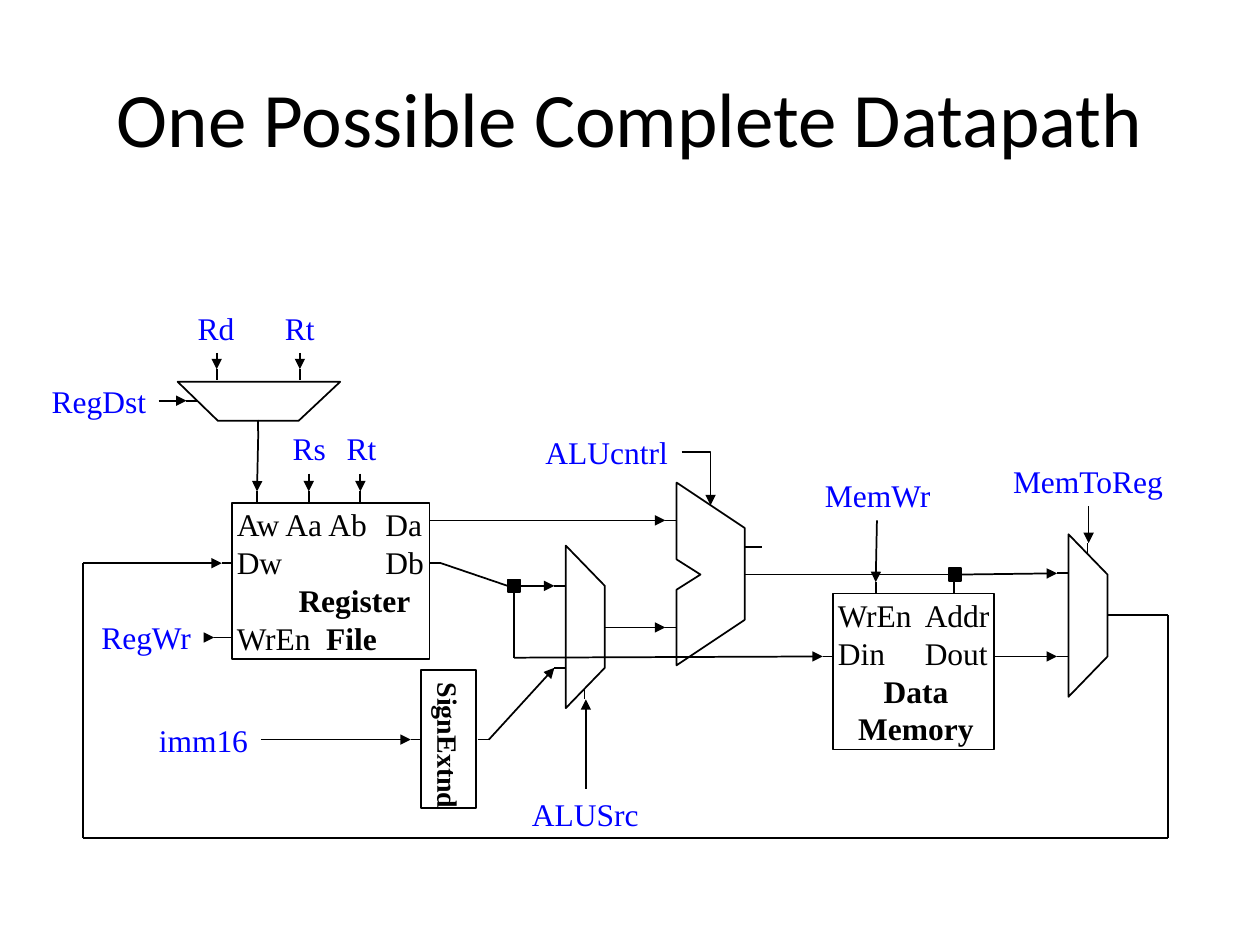
from itertools import pairwise
from lxml.etree import SubElement
from pptx import Presentation
from pptx.dml.color import RGBColor
from pptx.enum.shapes import MSO_CONNECTOR as LINK, MSO_SHAPE as SHAPE
from pptx.enum.text import MSO_ANCHOR as ANCHOR, PP_ALIGN as ALIGN
from pptx.oxml.ns import qn
from pptx.util import Cm, Pt

HUE = {"ink": "000000", "label": "0000FF", "paper": "FFFFFF"}
SERIF = "Times New Roman"
UNIT = 2.54  # the drawing grid is 2.54 cm
STUB = 0.09


def put(para, text, size=18, hue="ink", bold=False, face=SERIF):
    """Add one run to a paragraph."""
    run = para.add_run()
    run.text = text
    run.font.size, run.font.bold, run.font.name = Pt(size), bold, face
    run.font.color.rgb = RGBColor.from_string(HUE[hue])


def wire(x1, y1, x2, y2, arrow=False, kind=LINK.STRAIGHT):
    line = pen.add_connector(kind, *[Cm(UNIT * v) for v in (x1, y1, x2, y2)])
    line.line.color.rgb = RGBColor.from_string(HUE["ink"])
    line.line.width = Pt(1)
    if arrow:
        SubElement(line.line._get_or_add_ln(), qn("a:tailEnd"), type="triangle")
    SubElement(line._element.spPr, qn("a:effectLst"))
    return line


deck = Presentation()
deck.slide_width, deck.slide_height = Cm(25.4), Cm(19.05)
pen = deck.slides.add_slide(deck.slide_layouts[6]).shapes

# Title
title = pen.add_textbox(*[Cm(UNIT * v) for v in (0.5, 0.3, 9, 1.25)]).text_frame
title.word_wrap = True
title.vertical_anchor = ANCHOR.MIDDLE
title.paragraphs[0].alignment = ALIGN.CENTER
put(title.paragraphs[0], "One Possible Complete Datapath", 44, face="Calibri")

# ALU and the three multiplexers
plates = [
    [(5.37, 5.28), (5.91, 4.92), (5.91, 4.19), (5.37, 3.83),
     (5.37, 4.44), (5.56, 4.56), (5.37, 4.68)],
    [(1.41, 3.03), (1.73, 3.34), (2.37, 3.34), (2.7, 3.03)],
]
for x, y in [(4.49, 4.33), (8.48, 4.24)]:
    plates.append([(x, y), (x + 0.31, y + 0.32),
                   (x + 0.31, y + 0.97), (x, y + 1.29)])
solids = []
for dots in plates:
    dots = [(Cm(UNIT * x), Cm(UNIT * y)) for x, y in dots]
    form = pen.build_freeform(*dots[0], scale=1.0)
    form.add_line_segments(dots[1:], close=True)
    solids.append((form.convert_to_shape(), "paper"))

# Boxes and junction dots
blocks = []
for x, y, w, h, hue in [
    (1.84, 3.99, 1.57, 1.24, "paper"), (6.61, 4.71, 1.28, 1.24, "paper"),
    (3.34, 5.32, 0.44, 1.09, "paper"),
    (4.03, 4.6, 0.1, 0.1, "ink"), (7.53, 4.51, 0.1, 0.1, "ink"),
]:
    box = pen.add_shape(SHAPE.RECTANGLE, *[Cm(UNIT * v) for v in (x, y, w, h)])
    blocks.append(box)
    solids.append((box, hue))
for shape, hue in solids:
    shape.shadow.inherit = False
    shape.fill.solid()
    shape.fill.fore_color.rgb = RGBColor.from_string(HUE[hue])
    shape.line.color.rgb = RGBColor.from_string(HUE["ink"])
    shape.line.width = Pt(1)

# Port names: each row has a tab stop (None centres it) and (text, bold) runs
ports = [
    [(1.18, [("Aw Aa Ab\tDa", False)]), (1.18, [("Dw\tDb", False)]),
     (0.49, [("\tRegister", True)]),
     (0.71, [("WrEn\t", False), ("File", True)])],
    [(0.69, [("WrEn\tAddr", False)]), (0.69, [("Din\tDout", False)]),
     (None, [("Data", True)]), (None, [("Memory", True)])],
]
for box, rows in zip(blocks, ports):
    frame = box.text_frame
    frame.word_wrap = True
    frame.vertical_anchor = ANCHOR.MIDDLE
    frame.margin_left, frame.margin_right = Cm(0.1), 0
    for i, (stop, runs) in enumerate(rows):
        para = frame.add_paragraph() if i else frame.paragraphs[0]
        para.alignment = ALIGN.LEFT if stop else ALIGN.CENTER
        if stop:
            tabs = SubElement(para._p.get_or_add_pPr(), qn("a:tabLst"))
            SubElement(tabs, qn("a:tab"), pos=str(Cm(UNIT * stop)), algn="l")
        for text, bold in runs:
            put(para, text, bold=bold)

sign = blocks[2].text_frame
sign.word_wrap = False
sign.vertical_anchor = ANCHOR.MIDDLE
sign._txBody.bodyPr.set("vert", "eaVert")
sign.paragraphs[0].alignment = ALIGN.CENTER
put(sign.paragraphs[0], "SignExtnd", 16, bold=True)

# Signal names
for text, x, y, w in [
    ("Rd", 1.47, 2.4, 0.49), ("Rt", 2.16, 2.4, 0.44),
    ("RegDst", 0.31, 2.98, 0.95), ("Rs", 2.22, 3.36, 0.47),
    ("Rt", 2.65, 3.36, 0.44), ("ALUcntrl", 4.23, 3.39, 1.17),
    ("MemWr", 6.44, 3.73, 1.05), ("MemToReg", 7.93, 3.62, 1.41),
    ("RegWr", 0.7, 4.86, 0.92), ("imm16", 1.16, 5.67, 0.91),
    ("ALUSrc", 4.12, 6.26, 1.05),
]:
    frame = pen.add_textbox(*[Cm(UNIT * v) for v in (x, y, w, 0.4)]).text_frame
    frame.word_wrap = False
    frame.paragraphs[0].alignment = ALIGN.CENTER
    put(frame.paragraphs[0], text, hue="label")

# Short port stubs, by left or top end
for x, y in [
    (5.91, 4.56), (5.28, 4.13), (5.28, 4.98), (4.8, 4.98), (4.4, 4.65),
    (4.4, 5.3), (8.79, 4.88), (8.39, 5.21), (8.39, 4.55), (1.48, 3.18),
    (3.26, 5.87), (3.79, 5.87), (7.89, 5.21), (6.53, 5.21), (1.76, 4.47),
    (3.41, 4.47), (3.41, 4.13),
]:
    wire(x, y, x + STUB, y)
for x, y in [
    (4.64, 5.46), (8.63, 4.31), (2.05, 3.33), (2.38, 2.93), (1.72, 2.93),
    (6.95, 4.62), (7.57, 4.62), (2.04, 3.9), (2.45, 3.9), (2.86, 3.9),
]:
    wire(x, y, x, y + STUB)

# Plain wires
for ends in [(5.91, 4.34, 6.05, 4.34), (1.7, 5.06, 1.84, 5.06),
             (3.5, 4.47, 4.03, 4.65), (6, 4.56, 7.53, 4.56)]:
    wire(*ends)

# Wires with an arrowhead
for ends in [
    (3.88, 5.87, 4.4, 5.3), (4.89, 4.98, 5.28, 4.98), (2.07, 5.87, 3.26, 5.87),
    (4.13, 4.65, 4.4, 4.65), (7.62, 4.56, 8.39, 4.55), (7.57, 4.6, 7.57, 4.62),
    (2.05, 3.42, 2.04, 3.9), (2.45, 3.76, 2.45, 3.9), (2.86, 3.76, 2.86, 3.9),
    (3.5, 4.13, 5.28, 4.13), (7.98, 5.21, 8.39, 5.21), (4.65, 6.26, 4.65, 5.55),
    (1.26, 3.18, 1.48, 3.18), (1.72, 2.8, 1.72, 2.93), (2.38, 2.8, 2.38, 2.93),
    (1.62, 5.06, 1.7, 5.06), (6.96, 4.13, 6.95, 4.62), (8.64, 4.02, 8.64, 4.31),
]:
    wire(*ends, arrow=True)

# Write-back loop and the path from Db to Din
for route in [
    [(8.87, 4.88), (9.27, 4.88), (9.27, 6.65), (0.66, 6.65), (0.66, 4.47),
     (1.76, 4.47)],
    [(4.08, 4.69), (4.08, 5.22), (6.53, 5.21)],
]:
    for start, end in pairwise(route):
        wire(*start, *end, arrow=end == route[-1])

# ALU control turns one corner
bend = wire(5.41, 3.59, 5.64, 4.01, True, LINK.ELBOW)
bend._element.spPr.find(qn("a:prstGeom")).set("prst", "bentConnector2")

deck.save("out.pptx")
